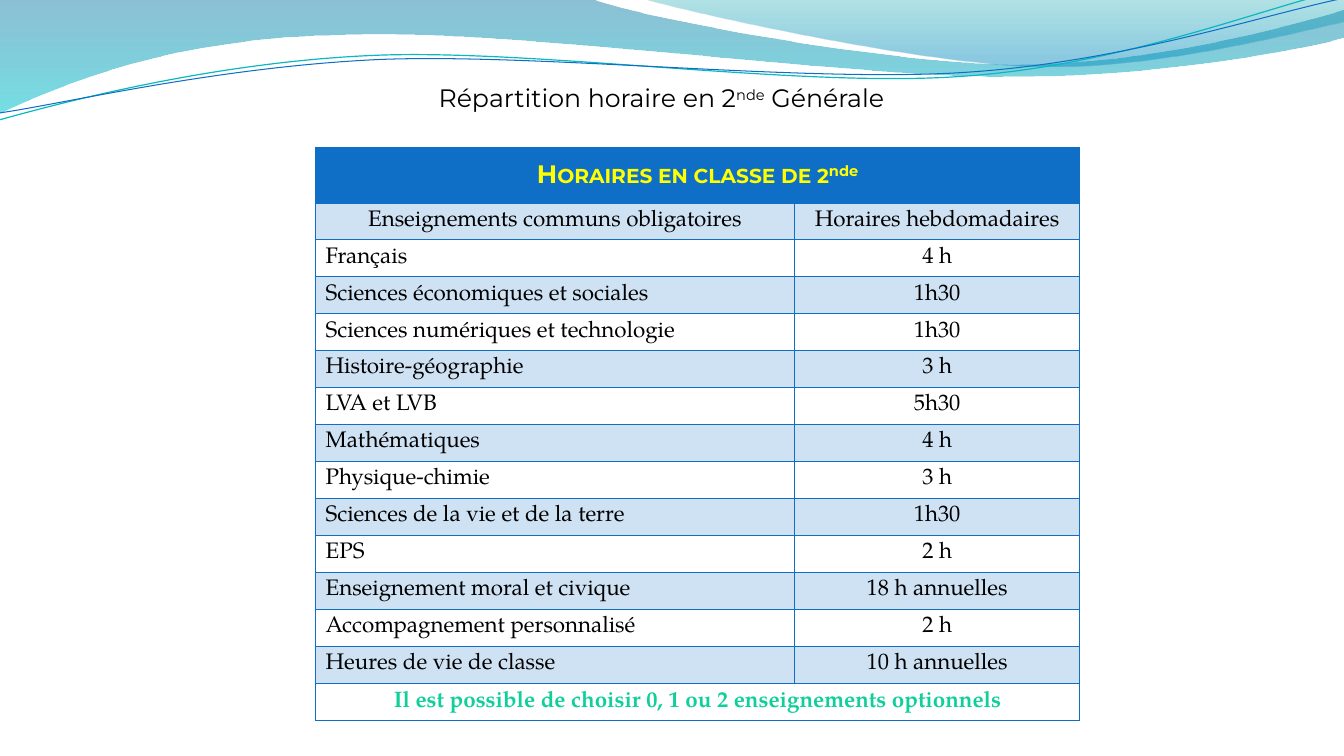
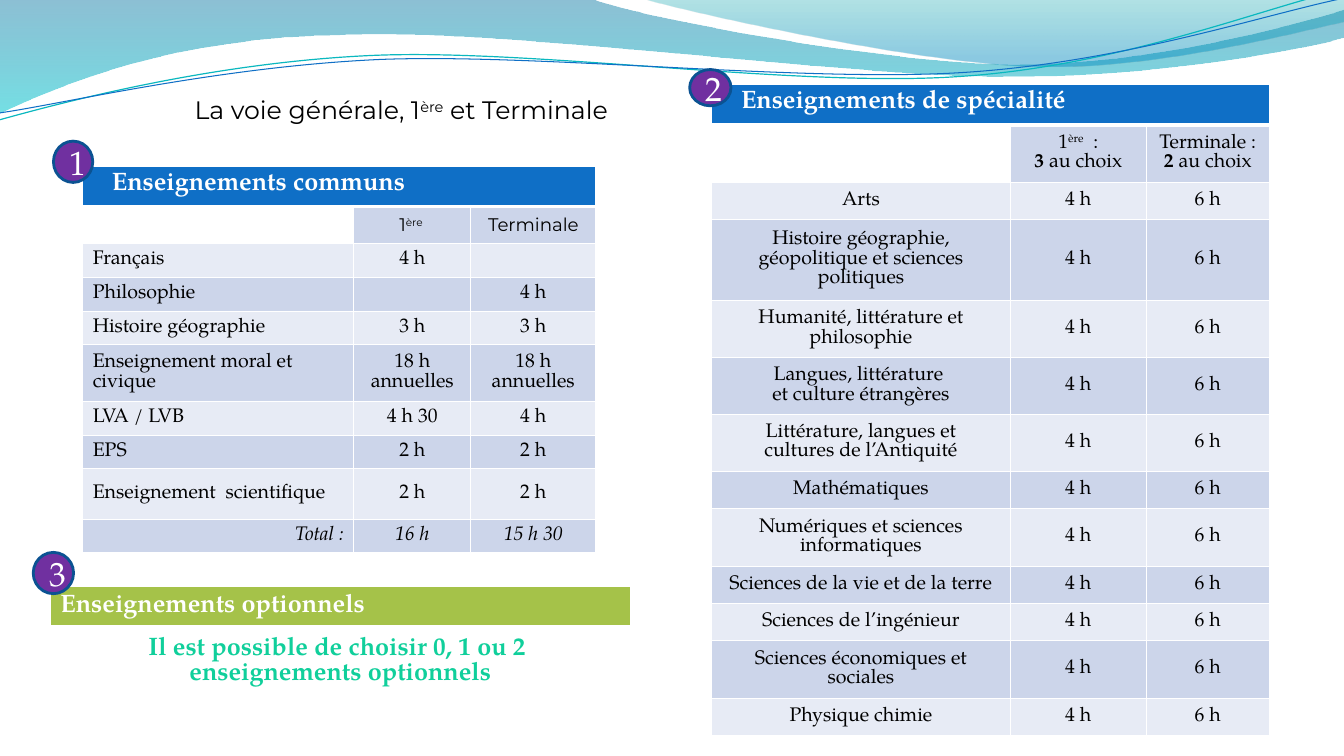
from dataclasses import dataclass, field, replace
from typing import Optional

import pptx
import pptx.dml.color
import pptx.enum.shapes
import pptx.enum.text
import pptx.oxml
import pptx.oxml.ns
import pptx.util

Inches = pptx.util.Inches
Pt = pptx.util.Pt
PP_ALIGN = pptx.enum.text.PP_ALIGN
MSO_ANCHOR = pptx.enum.text.MSO_ANCHOR
qn = pptx.oxml.ns.qn


@dataclass(frozen=True)
class Theme:
    blue: str = "0F6FC6"
    teal: str = "0AB8BF"
    green: str = "A5C249"
    mint: str = "10CF9B"
    purple: str = "7030A0"
    navy: str = "0B5292"
    yellow: str = "FFFF00"
    black: str = "000000"
    white: str = "FFFFFF"
    band_dark: str = "CCD5EA"
    band_light: str = "E7EBF5"
    title_font: str = "Montserrat"
    body_font: str = "TeX Gyre Pagella"
    heading_size: int = 18
    table_size: int = 16
    body_size: int = 14
    label_size: int = 13
    badge_size: int = 24


T = Theme()


@dataclass(frozen=True)
class TextStyle:
    size: int = T.body_size
    font: str = T.body_font
    color: str = T.black
    bold: bool = False
    italic: bool = False
    small_caps: bool = False
    align: PP_ALIGN = PP_ALIGN.CENTER


BODY = TextStyle()
BODY_LEFT = replace(BODY, align=PP_ALIGN.LEFT)
HOURS = replace(BODY, size=T.table_size)
HOURS_LEFT = replace(HOURS, align=PP_ALIGN.LEFT)
LABEL = replace(BODY, size=T.label_size, font=T.title_font)
TITLE = replace(BODY, size=T.heading_size, font=T.title_font)
CAPS = replace(TITLE, color=T.yellow, bold=True, small_caps=True)
HEADING = TextStyle(T.heading_size, color=T.white, bold=True, align=PP_ALIGN.LEFT)
BADGE = replace(BODY, size=T.badge_size, color=T.white)
TOTAL = replace(BODY, italic=True)


@dataclass(frozen=True)
class Cell:
    text: str = ""
    style: TextStyle = BODY
    fill: Optional[str] = None
    opacity: int = 100
    anchor: MSO_ANCHOR = MSO_ANCHOR.MIDDLE
    indent: float = 0.1


@dataclass(frozen=True)
class Grid:
    """A table; the last cell of a short row spans the remaining columns."""
    left: float
    top: float
    cols: list[float]
    heights: list[float]
    rows: list[list[Cell]]
    border: str = T.white
    header_rule: float = 3


@dataclass(frozen=True)
class Wave:
    """A path: segments hold 2 numbers for a line, 6 for a Bézier curve."""
    start: tuple[float, float]
    segments: list[tuple[float, ...]]
    stops: list[tuple[float, str, int]] = field(default_factory=list)
    line: str = ""
    width: float = 0


@dataclass(frozen=True)
class Badge:
    text: str
    left: float
    top: float
    width: float
    height: float


WAVES = [
    Wave((0, 0), [(5.87, -0.01), (6.34, 0.18, 8.85, 0.64, 10.11, 0.64),
                  (11.38, 0.64, 12.78, 0.27, 13.33, 0.1), (13.35, 0.37),
                  (13.11, 0.45, 11.6, 0.77, 9.94, 0.76), (8.29, 0.76, 5.09, 0.29, 3.43, 0.35),
                  (1.72, 0.37, 0.61, 0.84, -0.01, 1.13)],
         stops=[(0, "0074A1", 45), (1, "00C6CF", 55)]),
    Wave((6.36, -0.01), [(6.79, 0.12, 9.09, 0.63, 10.25, 0.66),
                         (11.41, 0.7, 12.82, 0.33, 13.33, 0.22), (13.33, 0)],
         stops=[(0, "00A1A9", 30), (0.8, "008BBF", 45)]),
    Wave((-0.01, 1.19), [(0.64, 1.01, 2.11, 0.62, 3.69, 0.55), (5.27, 0.48, 7.9, 0.87, 9.5, 0.76),
                         (11.1, 0.66, 12.52, 0.08, 13.31, -0.1)], line=T.teal, width=0.85),
    Wave((0, 1.12), [(0.63, 1.03, 2.18, 0.66, 3.78, 0.59), (5.37, 0.53, 7.96, 0.82, 9.55, 0.72),
                     (11.15, 0.62, 12.55, 0.14, 13.34, -0.02)], line=T.blue, width=0.75),
]


def rgb(color: str) -> pptx.dml.color.RGBColor:
    return pptx.dml.color.RGBColor.from_string(color)


def add_opacity(parent, percent: int) -> None:
    """Make every RGB colour under parent partly transparent."""
    for clr in parent.iter(qn("a:srgbClr")):
        clr.append(clr.makeelement(qn("a:alpha"), {"val": str(percent * 1000)}))


def write_text(tf, text: str, style: TextStyle, exact: bool = False) -> None:
    """Fill tf; ^ toggles superscript, * toggles bold, a newline starts a paragraph."""
    for n, line in enumerate(text.split("\n")):
        p = tf.add_paragraph() if n else tf.paragraphs[0]
        p.alignment = style.align
        if exact:
            p.line_spacing = Pt(style.size)
        if not line:
            p._p.get_or_add_endParaRPr().set("sz", str(style.size * 100))
        for i, chunk in enumerate(line.split("^")):
            for j, part in enumerate(chunk.split("*")):
                if not part:
                    continue
                r = p.add_run()
                r.text = part
                r.font.size = Pt(style.size)
                r.font.name = style.font
                r.font.color.rgb = rgb(style.color)
                r.font.bold = style.bold or j % 2 == 1
                r.font.italic = style.italic
                if i % 2:
                    r.font._element.set("baseline", "30000")
                elif style.small_caps:
                    r.font._element.set("cap", "small")


def bend(sp, wave: Wave) -> None:
    """Join the straight steps through control points into Bézier curves."""
    steps = list(sp._element.iter(qn("a:lnTo")))
    for seg in wave.segments:
        group, steps = steps[:len(seg) // 2], steps[len(seg) // 2:]
        if len(group) == 1:
            continue
        curve = group[0].makeelement(qn("a:cubicBezTo"), {})
        group[0].addprevious(curve)
        for step in group:
            curve.append(step[0])
            step.getparent().remove(step)


def add_wave(s, wave: Wave) -> None:
    points = [seg[k:k + 2] for seg in wave.segments for k in range(0, len(seg), 2)]
    fb = s.shapes.build_freeform(Inches(wave.start[0]), Inches(wave.start[1]))
    fb.add_line_segments([(Inches(x), Inches(y)) for x, y in points], close=bool(wave.stops))
    sp = fb.convert_to_shape()
    bend(sp, wave)
    sp.shadow.inherit = False
    if not wave.stops:
        sp.fill.background()
        sp.line.color.rgb = rgb(wave.line)
        sp.line.width = Pt(wave.width)
        return
    sp.line.fill.background()
    sp.fill.gradient()
    sp.fill.gradient_angle = 270
    for stop, (position, color, opacity) in zip(sp.fill.gradient_stops, wave.stops):
        stop.position = position
        stop.color.rgb = rgb(color)
        add_opacity(stop._gs, opacity)


def add_slide(prs, title: str, left: float, top: float, width: float):
    """A blank slide with the shared waves and title."""
    s = prs.slides.add_slide(prs.slide_layouts[6])
    for wave in WAVES:
        add_wave(s, wave)
    tf = s.shapes.add_textbox(Inches(left), Inches(top), Inches(width), Inches(0.4)).text_frame
    tf.word_wrap = True
    write_text(tf, title, TITLE)
    return s


def set_borders(cell, color: str, widths: dict[str, float]) -> None:
    tcPr = cell._tc.get_or_add_tcPr()
    for n, (side, width) in enumerate(widths.items()):
        ln = tcPr.makeelement(qn(f"a:ln{side}"), {"w": str(Pt(width))})
        fill = ln.makeelement(qn("a:solidFill"), {})
        fill.append(fill.makeelement(qn("a:srgbClr"), {"val": color}))
        ln.append(fill)
        tcPr.insert(n, ln)


def format_cell(cell, spec: Cell) -> None:
    cell.vertical_anchor = spec.anchor
    cell.margin_left = Inches(spec.indent)
    if spec.fill is None:
        cell.fill.background()
        return
    cell.fill.solid()
    cell.fill.fore_color.rgb = rgb(spec.fill)
    if spec.opacity < 100:
        add_opacity(cell._tc.tcPr, spec.opacity)


def add_grid(s, grid: Grid) -> None:
    n_cols = len(grid.cols)
    table = s.shapes.add_table(len(grid.rows), n_cols, Inches(grid.left), Inches(grid.top),
                               Inches(sum(grid.cols)), Inches(sum(grid.heights))).table
    table.first_row = table.horz_banding = False
    for col, width in zip(table.columns, grid.cols):
        col.width = Inches(width)
    for r, (row, height) in enumerate(zip(grid.rows, grid.heights)):
        table.rows[r].height = Inches(height)
        last = len(row) - 1
        if last < n_cols - 1:
            table.cell(r, last).merge(table.cell(r, n_cols - 1))
        for c in range(n_cols):
            spec, cell = row[min(c, last)], table.cell(r, c)
            write_text(cell.text_frame, spec.text if c <= last else "", spec.style,
                       exact=spec.style.font == T.body_font)
            format_cell(cell, spec)
            set_borders(cell, grid.border, {"L": 1, "R": 1, "T": grid.header_rule if r == 1 else 1,
                                            "B": grid.header_rule if r == 0 else 1})


def add_badge(s, badge: Badge) -> None:
    sp = s.shapes.add_shape(pptx.enum.shapes.MSO_SHAPE.OVAL, Inches(badge.left), Inches(badge.top),
                            Inches(badge.width), Inches(badge.height))
    sp.shadow.inherit = False
    sp.fill.solid()
    sp.fill.fore_color.rgb = rgb(T.purple)
    sp.line.color.rgb = rgb(T.navy)
    sp.line.width = Pt(2)
    write_text(sp.text_frame, badge.text, BADGE)


def heading(text: str) -> list[Cell]:
    return [Cell(text, HEADING, T.blue, anchor=MSO_ANCHOR.TOP, indent=0.29)]


def banded(rows: list[tuple[str, ...]], first_style: TextStyle) -> list[list[Cell]]:
    return [[Cell(text, BODY if c else first_style, T.band_dark if r % 2 else T.band_light)
             for c, text in enumerate(row)] for r, row in enumerate(rows)]


def subheads(style: TextStyle, *texts: str) -> list[Cell]:
    return [Cell(fill=T.white)] + [Cell(text, style, T.band_dark) for text in texts]


def build_seconde(prs) -> None:
    s = add_slide(prs, "Répartition horaire en 2^nde^ Générale", 0.43, 0.77, 12.26)
    hours = [
        ("Enseignements communs obligatoires", "Horaires hebdomadaires"), ("Français", "4 h"),
        ("Sciences économiques et sociales", "1h30"), ("Sciences numériques et technologie", "1h30"),
        ("Histoire-géographie", "3 h"), ("LVA et LVB", "5h30"), ("Mathématiques", "4 h"),
        ("Physique-chimie", "3 h"), ("Sciences de la vie et de la terre", "1h30"), ("EPS", "2 h"),
        ("Enseignement moral et civique", "18 h annuelles"),
        ("Accompagnement personnalisé", "2 h"), ("Heures de vie de classe", "10 h annuelles"),
    ]
    body = [[Cell(text, HOURS_LEFT if r and not c else HOURS, None if r % 2 else T.blue, 20)
             for c, text in enumerate(row)] for r, row in enumerate(hours)]
    note = Cell("Il est possible de choisir 0, 1 ou 2 enseignements optionnels",
                replace(HOURS, color=T.mint, bold=True))
    rows = [[Cell("Horaires en classe de 2^nde^", CAPS, T.blue)], *body, [note]]
    n = len(rows) - 1
    add_grid(s, Grid(3.13, 1.46, [4.75, 2.83], [0.55] + [5.14 / n] * n, rows, T.blue, 2))


def build_voie_generale(prs) -> None:
    s = add_slide(prs, "La voie générale, 1^ère^ et Terminale", 0.53, 0.89, 6.9)
    common = [
        ("Français", "4 h", ""), ("Philosophie", "", "4 h"), ("Histoire géographie", "3 h", "3 h"),
        ("Enseignement moral et civique", "18 h annuelles", "18 h annuelles"),
        ("LVA / LVB", "4 h 30", "4 h"), ("EPS", "2 h", "2 h"),
        ("Enseignement  scientifique", "2 h", "2 h"),
    ]
    total = [Cell(text, replace(TOTAL, align=align), T.band_dark) for text, align in
             (("Total :", PP_ALIGN.RIGHT), ("16 h", PP_ALIGN.CENTER), ("15 h 30", PP_ALIGN.CENTER))]
    add_grid(s, Grid(0.82, 1.65, [2.69, 1.16, 1.24],
                     [0.4, 0.37, 0.33, 0.33, 0.33, 0.57, 0.33, 0.33, 0.51, 0.33],
                     [heading("Enseignements communs"), subheads(LABEL, "1^ère ^", "Terminale"),
                      *banded(common, BODY_LEFT), total]))

    one, two, three = 0.37, 0.57, 0.8
    specialties = [
        ("Arts", one), ("Histoire géographie, géopolitique et sciences politiques", three),
        ("Humanité, littérature et philosophie", two),
        ("Langues, littérature \net culture étrangères", 0.56),
        ("Littérature, langues et\ncultures de l’Antiquité", two), ("Mathématiques", one),
        ("Numériques et sciences informatiques", two), ("Sciences de la vie et de la terre", one),
        ("Sciences de l’ingénieur", one), ("Sciences économiques et sociales", two),
        ("Physique chimie", one),
    ]
    add_grid(s, Grid(7.06, 0.84, [2.96, 1.35, 1.22], [0.4, two] + [h for _, h in specialties],
                     [heading("Enseignements de spécialité"),
                      subheads(BODY, "1^ère^  :\n*3* au choix", "Terminale :\n*2* au choix"),
                      *banded([(name, "4 h", "6 h") for name, _ in specialties], BODY)]))

    note = replace(HEADING, color=T.mint, align=PP_ALIGN.CENTER)
    add_grid(s, Grid(0.5, 5.82, [5.75], [0.4, 0.7],
                     [[Cell("Enseignements optionnels", HEADING, T.green)],
                      [Cell("Il est possible de choisir 0, 1 ou 2 \nenseignements optionnels", note)]]))
    for badge in (Badge("1", 0.53, 1.4, 0.39, 0.41), Badge("2", 6.84, 0.69, 0.41, 0.36),
                  Badge("3", 0.33, 5.48, 0.4, 0.41)):
        add_badge(s, badge)


def main() -> None:
    prs = pptx.Presentation()
    prs.slide_width, prs.slide_height = Inches(13.33), Inches(7.5)
    build_seconde(prs)
    build_voie_generale(prs)
    prs.save("out.pptx")


if __name__ == "__main__":
    main()
